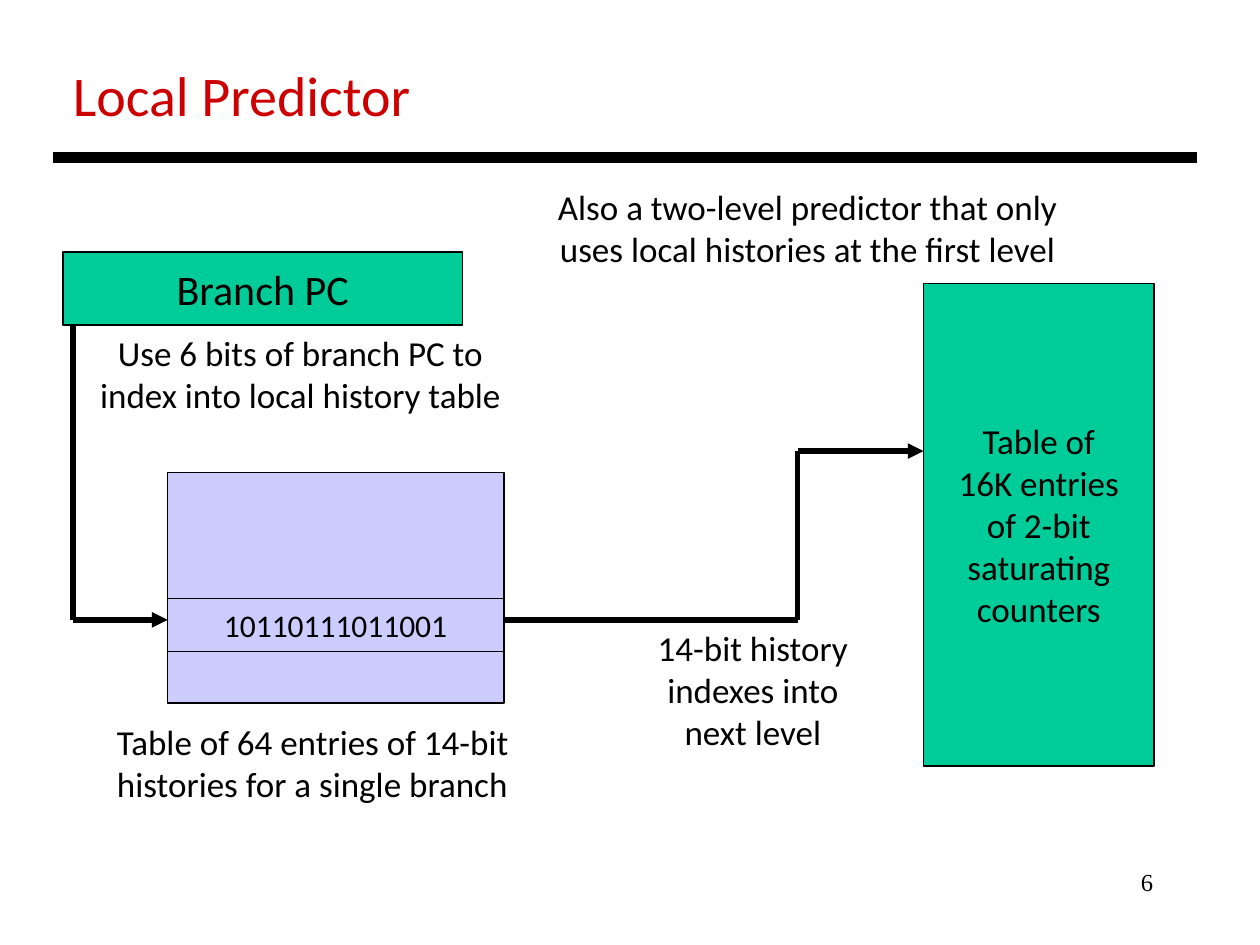
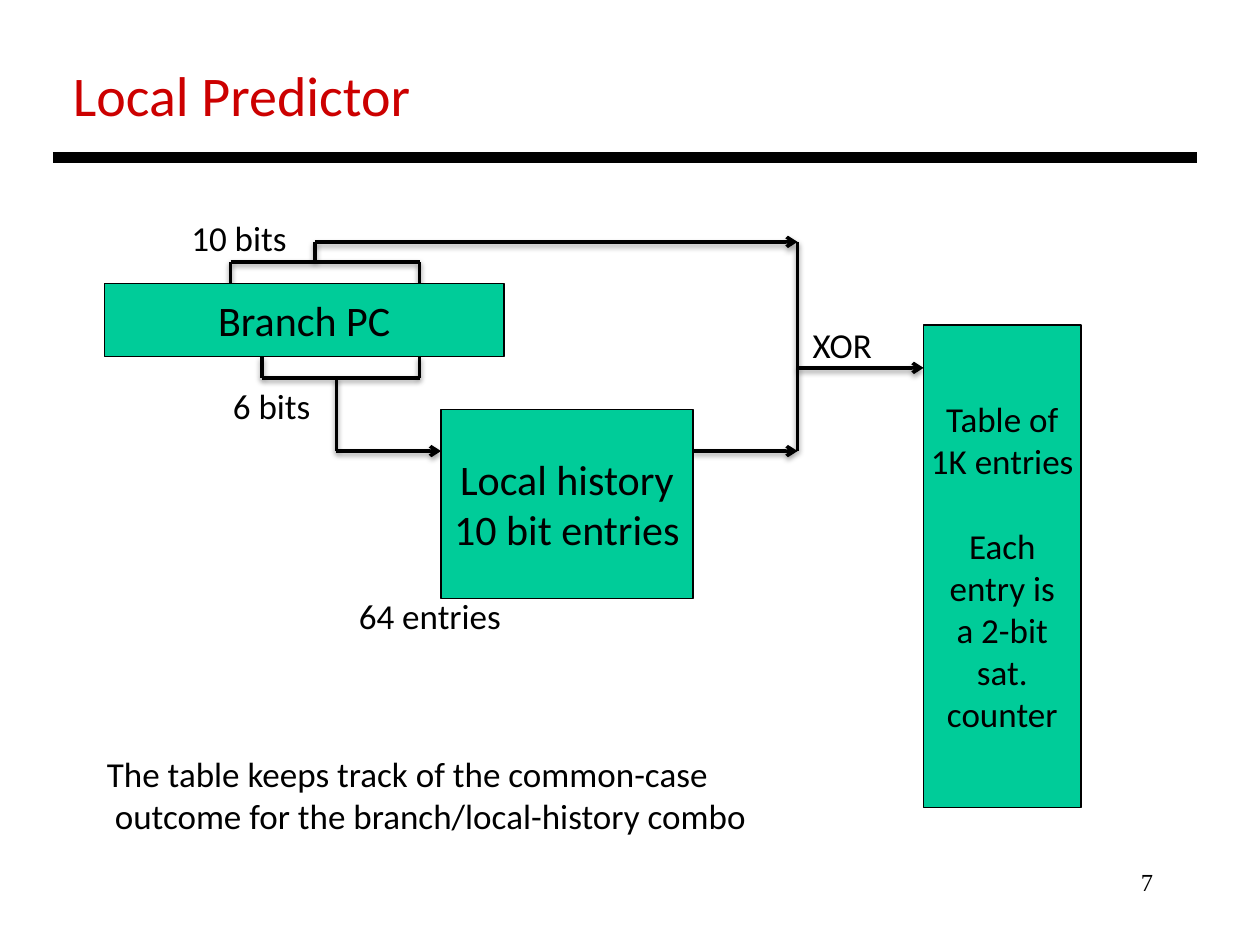
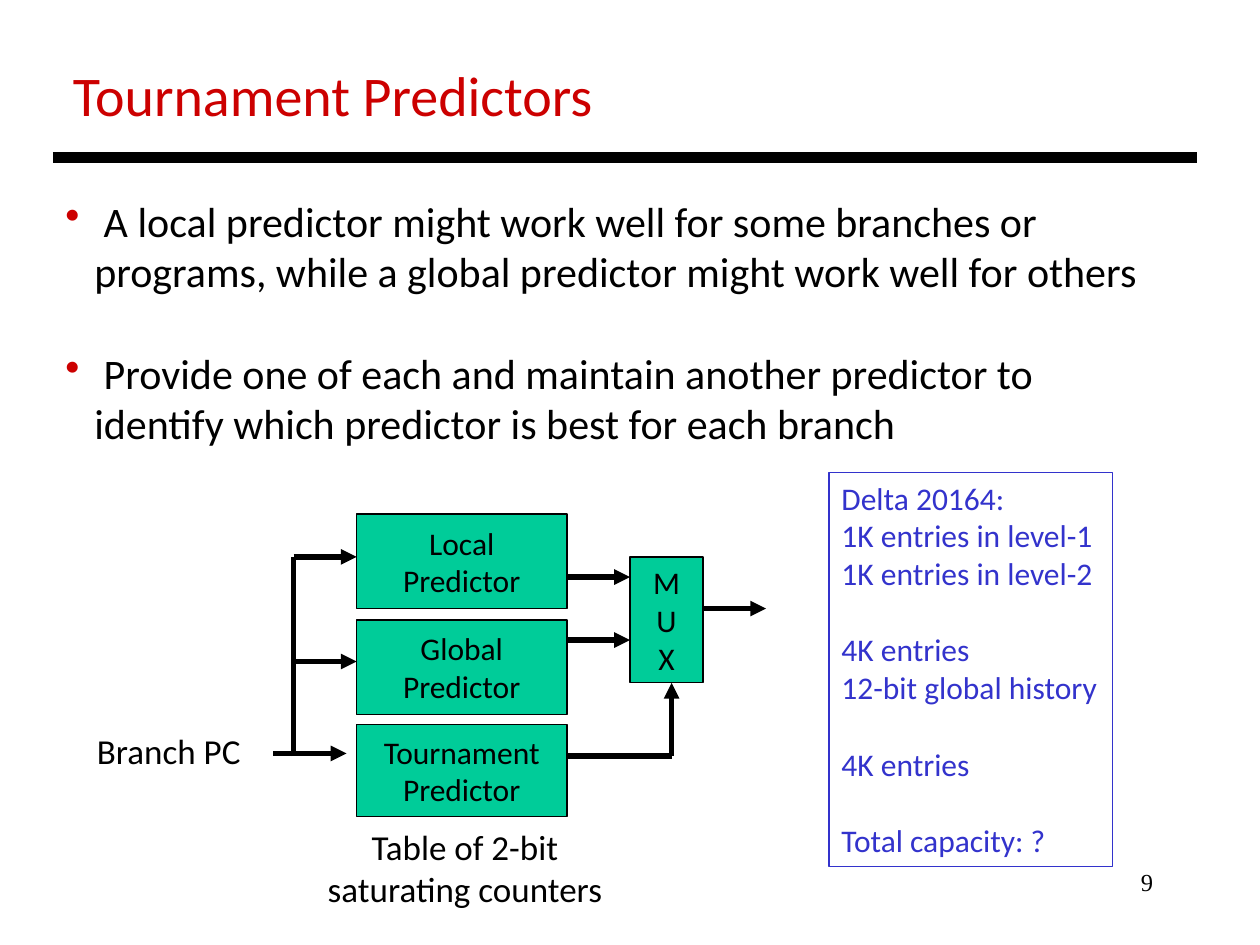
from itertools import pairwise

from lxml.etree import SubElement
from pptx import Presentation
from pptx.dml.color import RGBColor
from pptx.enum.shapes import MSO_CONNECTOR as Connector, MSO_SHAPE as Shape
from pptx.enum.text import MSO_ANCHOR as Anchor, PP_ALIGN as Align
from pptx.oxml.ns import qn
from pptx.util import Inches, Pt

BLACK, RED, GREEN, LILAC, BLUE = "000000", "CC0000", "00CC99", "CCCCFF", "3333CC"
LINE_HEIGHT = 1.22  # Calibri line height, relative to the text size

# Content. Labels and boxes: (left, top, width, height), lines, format values.
# An empty line stands for a gap. Wires: corner points, arrowhead or None.
CENTRED = {"align": Align.CENTER}
SMALL = {"size": 18}
MEDIUM = {"size": 20}

LOCAL_TABLES = {
    "title": "Local Predictor", "title_width": 2.91, "number": "6",
    "wire": {"width": 3},
    "wires": [
        ([(0.58, 2.58), (0.58, 4.92), (1.33, 4.92)], "triangle"),
        ([(4, 4.92), (6.33, 4.92), (6.33, 3.58), (7.33, 3.58)], "triangle"),
    ],
    "boxes": [
        ((0.5, 2, 3.17, 0.58), ["Branch PC"], {}),
        ((7.33, 2.25, 1.83, 3.83),
         ["Table of", "16K entries", "of 2-bit", "saturating", "counters"], MEDIUM),
        ((1.33, 3.75, 2.67, 1.83), [], {"fill": LILAC}),
        ((1.33, 4.75, 2.67, 0.42), ["10110111011001"], {"fill": LILAC, **SMALL}),
    ],
    "labels": [
        ((0.83, 5.67, 3.34, 0.77),
         ["Table of 64 entries of 14-bit", "histories for a single branch"], {}),
        ((0.68, 2.58, 3.41, 0.77),
         ["Use 6 bits of branch PC to", "index into local history table"], CENTRED),
        ((5.08, 4.92, 1.79, 1.1),
         ["14-bit history", "indexes into", "next level"], CENTRED),
        ((4.31, 1.42, 4.2, 0.77),
         ["Also a two-level predictor that only",
          "uses local histories at the first level"], CENTRED),
    ],
}

LOCAL_XOR = {
    "title": "Local Predictor", "title_width": 2.91, "number": "7",
    "wire": {"width": 2, "shadow": True},
    "wires": [
        ([(1.83, 2.25), (1.83, 2.08), (3.33, 2.08), (3.33, 2.25)], None),
        ([(2.5, 2.08), (2.5, 1.92), (6.33, 1.92)], "arrow"),
        ([(2.08, 2.83), (2.08, 3), (3.33, 3), (3.33, 2.83)], None),
        ([(2.67, 3), (2.67, 3.58), (3.5, 3.58)], "arrow"),
        ([(5.5, 3.58), (6.33, 3.58)], "arrow"),
        ([(6.33, 1.92), (6.33, 3.58)], None),
        ([(6.33, 2.92), (7.33, 2.92)], "arrow"),
    ],
    "boxes": [
        ((0.83, 2.25, 3.17, 0.58), ["Branch PC"], {}),
        ((7.33, 2.58, 1.25, 3.83),
         ["Table of", "1K entries", "", "Each", "entry is", "a 2-bit", "sat.",
          "counter"], MEDIUM),
        ((3.5, 3.25, 2, 1.5), ["Local history", "10 bit entries"], {}),
    ],
    "labels": [
        ((1.42, 1.67, 0.97, 0.44), ["10 bits"], {}),
        ((1.75, 3, 0.82, 0.44), ["6 bits"], {}),
        ((6.35, 2.52, 0.68, 0.44), ["XOR"], {}),
        ((2.75, 4.67, 1.34, 0.44), ["64 entries"], {}),
        ((0.75, 5.92, 5.32, 0.77),
         ["The table keeps track of the common-case",
          " outcome for the branch/local-history combo"], {}),
    ],
}

TOURNAMENT = {
    "title": "Tournament Predictors", "title_width": 4.37, "number": "9",
    "wire": {"width": 3},
    "wires": [
        ([(2.17, 5.98), (2.75, 5.98)], "triangle"),
        ([(2.33, 6), (2.33, 4.42), (2.83, 4.42)], "triangle"),
        ([(2.33, 5.25), (2.83, 5.25)], "triangle"),
        ([(4.5, 4.58), (5, 4.58)], "triangle"),
        ([(4.5, 5.08), (5, 5.08)], "triangle"),
        ([(4.5, 6), (5.33, 6), (5.33, 5.42)], "triangle"),
        ([(5.58, 4.83), (6.08, 4.83)], "triangle"),
    ],
    "boxes": [
        ((2.83, 4.08, 1.67, 0.75), ["Local", "Predictor"], SMALL),
        ((2.83, 4.92, 1.67, 0.75), ["Global", "Predictor"], SMALL),
        ((2.83, 5.75, 1.67, 0.73), ["Tournament", "Predictor"], SMALL),
        ((5, 4.42, 0.58, 1), ["M", "U", "X"], SMALL),
        ((6.58, 3.75, 2.25, 3.13),
         ["Delta 20164:", "1K entries in level-1", "1K entries in level-2", "",
          "4K entries", "12-bit global history", "", "4K entries", "",
          "Total capacity: ?"],
         {"fill": None, "line": BLUE, "color": BLUE, "align": Align.LEFT,
          "anchor": Anchor.TOP, **SMALL}),
    ],
    "labels": [
        ((0.42, 1.5, 9, 2.12),
         [" A local predictor might work well for some branches or\v"
          "programs, while a global predictor might work well for others", "",
          " Provide one of each and maintain another predictor to\v"
          "identify which predictor is best for each branch"],
         {"size": 24, "bullet": RED}),
        ((0.67, 5.74, 1.35, 0.44), ["Branch PC"], {}),
        ((2.49, 6.5, 2.4, 0.77), ["Table of 2-bit", "saturating counters"], CENTRED),
    ],
}


def rgb(value):
    return RGBColor.from_string(value)


def add_bullet(para, color):
    properties = para._p.get_or_add_pPr()
    indent = Inches(0.23)
    properties.set("marL", str(indent))
    properties.set("indent", str(-indent))
    SubElement(SubElement(properties, qn("a:buClr")), qn("a:srgbClr"), val=color)
    SubElement(properties, qn("a:buChar"), char="•")


def write(frame, lines, size=20, color=BLACK, font="Calibri", align=Align.LEFT,
          anchor=Anchor.TOP, bullet=None, wrap=False):
    frame.word_wrap = wrap
    frame.vertical_anchor = anchor
    gap, para = 0, None
    for line in lines:
        if not line:
            gap += size * LINE_HEIGHT
            continue
        para = frame.add_paragraph() if para else frame.paragraphs[0]
        para.text = line
        para.alignment = align
        para.space_before = Pt(gap)
        gap = 0
        if bullet:
            add_bullet(para, bullet)
        for span in para.runs:
            for name, value in {"size": Pt(size), "name": font}.items():
                setattr(span.font, name, value)
            span.font.color.rgb = rgb(color)


def add_label(page, place, lines, **style):
    box = page.shapes.add_textbox(*map(Inches, place))
    write(box.text_frame, lines, **style)


def add_box(page, place, lines, fill=GREEN, line=BLACK, **style):
    box = page.shapes.add_shape(Shape.RECTANGLE, *map(Inches, place))
    box.shadow.inherit = False
    if fill:
        box.fill.solid()
        box.fill.fore_color.rgb = rgb(fill)
    else:
        box.fill.background()
    box.line.color.rgb = rgb(line)
    box.line.width = Pt(0.75)
    defaults = {"size": 24, "align": Align.CENTER, "anchor": Anchor.MIDDLE}
    write(box.text_frame, lines, **(defaults | style))


def add_wire(page, points, head=None, width=3, shadow=False):
    """Join the points by straight lines; the last one carries the arrowhead."""
    for start, end in pairwise(points):
        ends = [Inches(value) for value in (*start, *end)]
        wire = page.shapes.add_connector(Connector.STRAIGHT, *ends)
        wire.line.color.rgb = rgb(BLACK)
        wire.line.width = Pt(width)
        if head and end == points[-1]:
            SubElement(wire.line._get_or_add_ln(), qn("a:tailEnd"), type=head)
        effects = SubElement(wire._element.spPr, qn("a:effectLst"))
        if shadow:
            outer = SubElement(effects, qn("a:outerShdw"), blurRad=str(Pt(3.1)),
                               dist=str(Pt(1.6)), dir="5400000", rotWithShape="0")
            tint = SubElement(outer, qn("a:srgbClr"), val=BLACK)
            SubElement(tint, qn("a:alpha"), val="38000")


def add_page(deck, content):
    page = deck.slides.add_slide(deck.slide_layouts[6])
    # Shared frame: page number, title and rule
    add_label(page, (7.17, 6.83, 2.08, 0.5), [content["number"]], size=14,
              font="Times New Roman", align=Align.RIGHT, wrap=True)
    add_label(page, (0.48, 0.43, content["title_width"], 0.64), [content["title"]],
              size=32, color=RED)
    add_wire(page, [(0.42, 1.25), (9.5, 1.25)], width=6)
    # Diagram
    for points, head in content["wires"]:
        add_wire(page, points, head, **content["wire"])
    for place, lines, style in content["boxes"]:
        add_box(page, place, lines, **style)
    for place, lines, style in content["labels"]:
        add_label(page, place, lines, **style)


def main():
    deck = Presentation()
    deck.slide_width, deck.slide_height = Inches(10), Inches(7.5)
    for content in (LOCAL_TABLES, LOCAL_XOR, TOURNAMENT):
        add_page(deck, content)
    deck.save("out.pptx")


if __name__ == "__main__":
    main()
